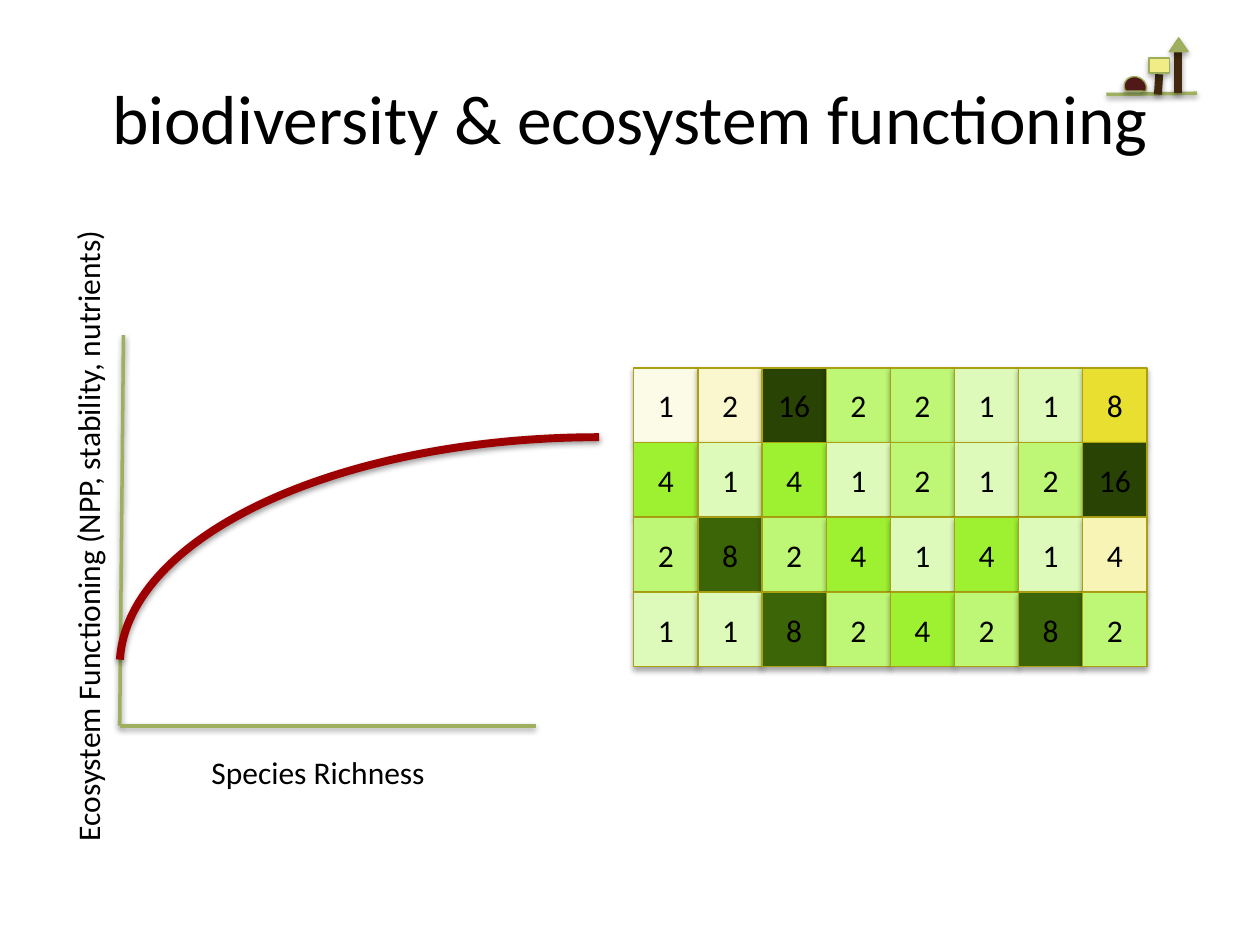
"""Build the biodiversity and ecosystem functioning slide."""
from dataclasses import dataclass

from lxml import etree
from pptx import Presentation
from pptx.dml.color import RGBColor
from pptx.enum.shapes import MSO_CONNECTOR, MSO_SHAPE
from pptx.enum.text import MSO_ANCHOR, PP_ALIGN
from pptx.oxml.ns import qn
from pptx.util import Inches, Pt

STRAIGHT = MSO_CONNECTOR.STRAIGHT
RECTANGLE = MSO_SHAPE.RECTANGLE
TRIANGLE = MSO_SHAPE.ISOSCELES_TRIANGLE
CHORD = MSO_SHAPE.CHORD
ARC = MSO_SHAPE.ARC
MIDDLE = MSO_ANCHOR.MIDDLE
CENTER = PP_ALIGN.CENTER
LEFT = PP_ALIGN.LEFT

FONT = "Calibri"
BLACK = "000000"
AXIS_GREEN = "9EB060"
ICON_EDGE = "9CAE5C"
TRUNK_BROWN = "41280E"
CURVE_RED = "9C0001"
PLOT_EDGE = "AAA112"

PLOT_LEFT, PLOT_TOP = 5.03, 2.92
PLOT_WIDTH, PLOT_HEIGHT = 0.51, 0.59
PLOT_STEP_X, PLOT_STEP_Y = 0.509, 0.594
SPECIES_COUNTS = [
    [1, 2, 16, 2, 2, 1, 1, 8],
    [4, 1, 4, 1, 2, 1, 2, 16],
    [2, 8, 2, 4, 1, 4, 1, 4],
    [1, 1, 8, 2, 4, 2, 8, 2],
]
GREENS = {1: "DEFABA", 2: "BEF676", 4: "9DF131", 8: "3C6507", 16: "284304"}
YELLOW_PLOTS = {(0, 0): "FCFBE7", (0, 1): "FAF7CF", (0, 7): "E9DF31", (2, 7): "F7F4B6"}


@dataclass
class Stroke:
    start: tuple[float, float]
    end: tuple[float, float]
    color: str
    weight: float


@dataclass
class Block:
    preset: int
    box: tuple[float, float, float, float]
    fill: str
    edge: str
    rotation: float = 0


@dataclass
class Label:
    text: str
    box: tuple[float, float, float, float]
    rotation: float = 0


AXES = [
    Stroke((0.98, 2.66), (0.95, 5.76), AXIS_GREEN, 2),
    Stroke((0.95, 5.76), (4.25, 5.76), AXIS_GREEN, 2),
]
AXIS_LABELS = [
    Label("Ecosystem Functioning (NPP, stability, nutrients)", (-1.85, 4.03, 5.09, 0.4), 270),
    Label("Species Richness", (1.58, 5.93, 1.96, 0.4)),
]
TREES = [
    Stroke((8.78, 0.75), (9.5, 0.74), AXIS_GREEN, 2),
    Stroke((9.35, 0.74), (9.35, 0.41), TRUNK_BROWN, 4.5),
    Block(TRIANGLE, (9.28, 0.3, 0.15, 0.11), AXIS_GREEN, ICON_EDGE),
    Stroke((9.19, 0.75), (9.2, 0.59), TRUNK_BROWN, 4.5),
    Block(RECTANGLE, (9.12, 0.46, 0.16, 0.12), "F2EC86", ICON_EDGE),
    Block(CHORD, (8.93, 0.6, 0.16, 0.18), "511818", ICON_EDGE, 112.4),
]


def rgb(value: str) -> RGBColor:
    return RGBColor.from_string(value)


def add_shadow(shape, distance: int, opacity: int) -> None:
    effects = etree.SubElement(shape.element.spPr, qn("a:effectLst"))
    shadow = etree.SubElement(
        effects, qn("a:outerShdw"), blurRad="40000", dist=str(distance), dir="5400000", rotWithShape="0"
    )
    color = etree.SubElement(shadow, qn("a:srgbClr"), val=BLACK)
    etree.SubElement(color, qn("a:alpha"), val=str(opacity * 1000))


def set_line(shape, color: str, weight: float) -> None:
    shape.line.color.rgb = rgb(color)
    shape.line.width = Pt(weight)


def write(frame, text: str, size: float, align) -> None:
    paragraph = frame.paragraphs[0]
    paragraph.alignment = align
    run = paragraph.add_run()
    run.text = text
    run.font.name = FONT
    run.font.size = Pt(size)
    run.font.color.rgb = rgb(BLACK)


def add_stroke(shapes, stroke: Stroke) -> None:
    points = [Inches(value) for value in stroke.start + stroke.end]
    connector = shapes.add_connector(STRAIGHT, *points)
    set_line(connector, stroke.color, stroke.weight)
    add_shadow(connector, 20000, 38)


def add_block(shapes, block: Block):
    shape = shapes.add_shape(block.preset, *[Inches(value) for value in block.box])
    shape.rotation = block.rotation
    shape.fill.solid()
    shape.fill.fore_color.rgb = rgb(block.fill)
    set_line(shape, block.edge, 0.75)
    add_shadow(shape, 23000, 35)
    return shape


def add_label(shapes, label: Label) -> None:
    box = shapes.add_textbox(*[Inches(value) for value in label.box])
    box.rotation = label.rotation
    box.text_frame.word_wrap = False
    write(box.text_frame, label.text, 18, LEFT)


def add_plots(shapes) -> None:
    for row, counts in enumerate(SPECIES_COUNTS):
        for column, count in enumerate(counts):
            box = (
                PLOT_LEFT + column * PLOT_STEP_X,
                PLOT_TOP + row * PLOT_STEP_Y,
                PLOT_WIDTH,
                PLOT_HEIGHT,
            )
            fill = YELLOW_PLOTS.get((row, column), GREENS[count])
            plot = add_block(shapes, Block(RECTANGLE, box, fill, PLOT_EDGE))
            plot.text_frame.vertical_anchor = MIDDLE
            write(plot.text_frame, str(count), 18, CENTER)


def add_curve(shapes) -> None:
    curve = shapes.add_shape(ARC, Inches(0.95), Inches(3.47), Inches(7.61), Inches(3.64))
    curve.adjustments[0] = 162
    curve.adjustments[1] = 215.506
    curve.element.spPr.xfrm.set("flipH", "1")
    curve.fill.background()
    set_line(curve, CURVE_RED, 4.5)
    add_shadow(curve, 20000, 38)


def add_title(slide) -> None:
    title = slide.shapes.title
    title.left, title.top = Inches(0.5), Inches(0.3)
    title.width, title.height = Inches(9), Inches(1.25)
    title.text_frame.vertical_anchor = MIDDLE
    write(title.text_frame, "biodiversity & ecosystem functioning", 39.6, CENTER)


def main() -> None:
    deck = Presentation()
    deck.slide_width, deck.slide_height = Inches(10), Inches(7.5)
    slide = deck.slides.add_slide(deck.slide_layouts[5])
    add_title(slide)
    for axis in AXES:
        add_stroke(slide.shapes, axis)
    for label in AXIS_LABELS:
        add_label(slide.shapes, label)
    add_plots(slide.shapes)
    add_curve(slide.shapes)
    trees = slide.shapes.add_group_shape()
    for part in TREES:
        if isinstance(part, Stroke):
            add_stroke(trees.shapes, part)
        else:
            add_block(trees.shapes, part)
    deck.save("out.pptx")


if __name__ == "__main__":
    main()
